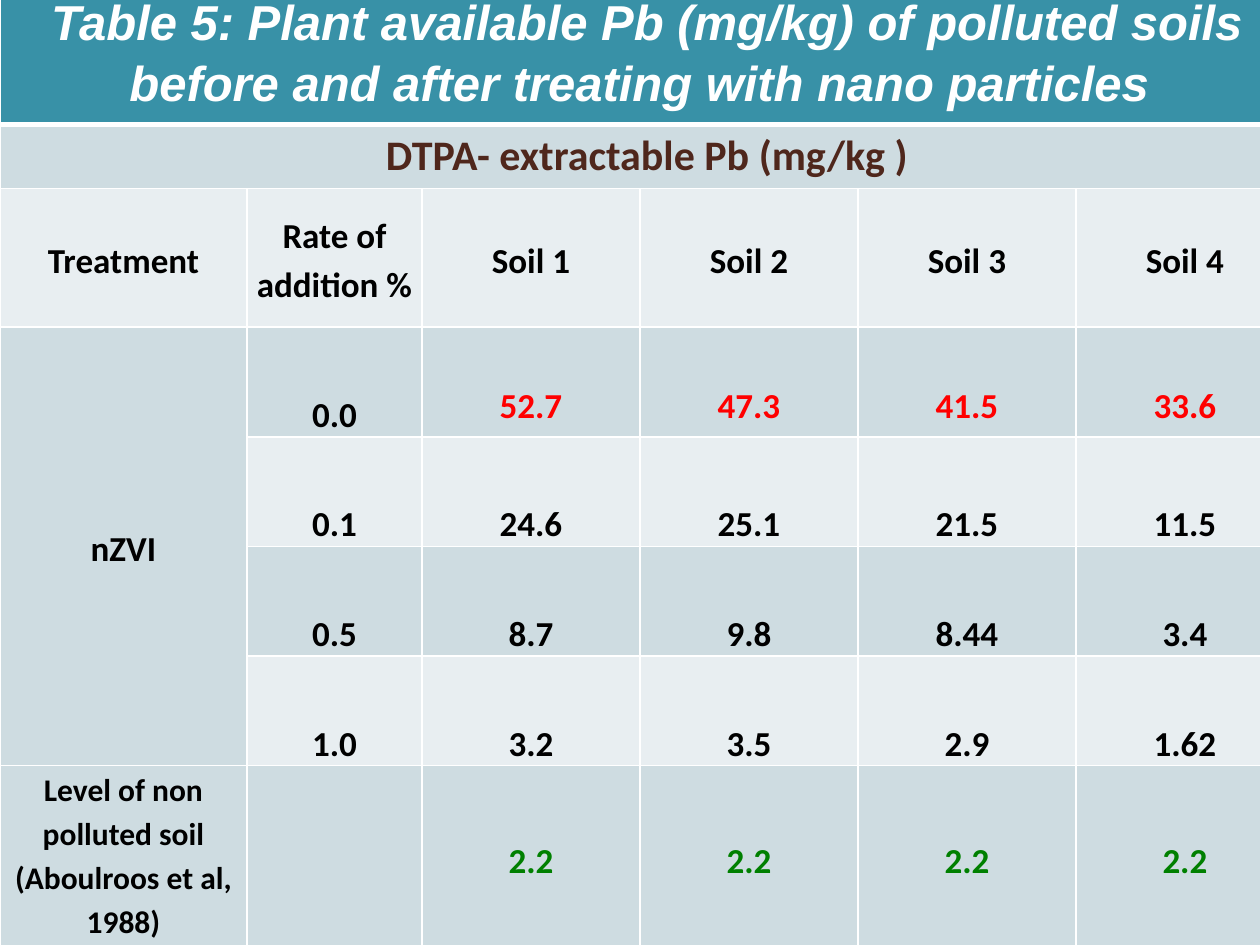
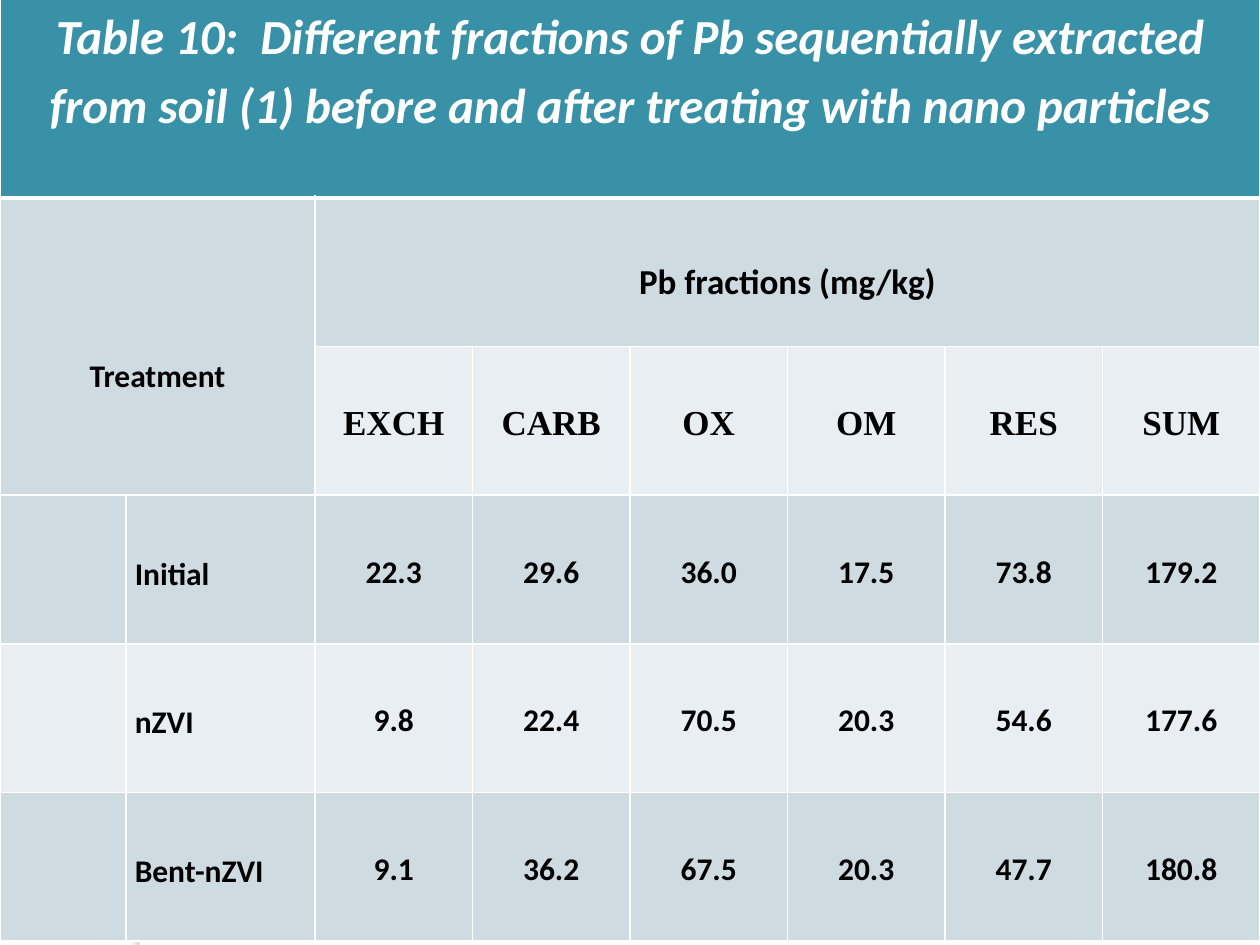
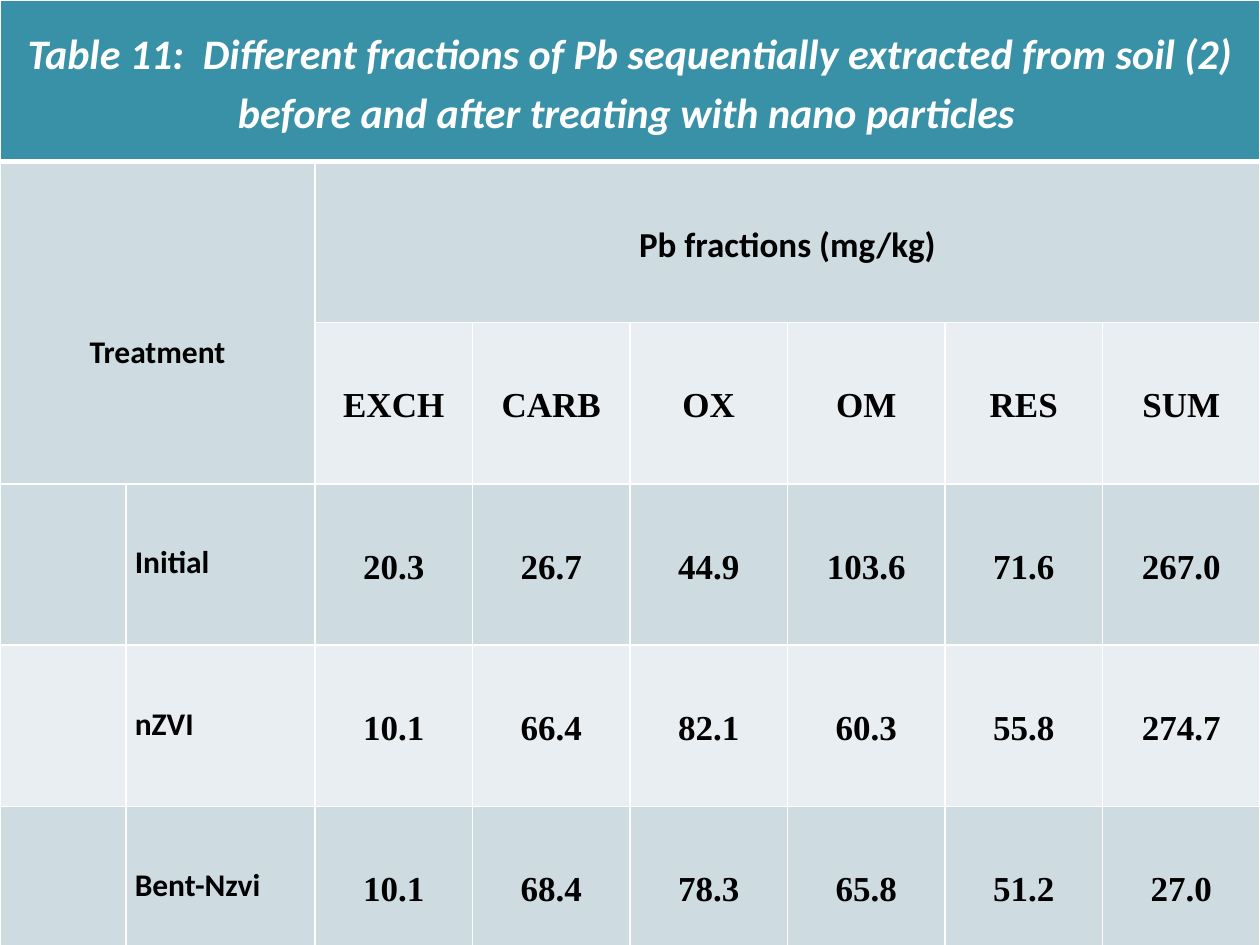
from dataclasses import dataclass, replace
from typing import NamedTuple

from lxml.etree import SubElement
from pptx import Presentation
from pptx.dml.color import RGBColor
from pptx.enum.shapes import MSO_SHAPE
from pptx.enum.text import MSO_ANCHOR, PP_ALIGN
from pptx.oxml.ns import qn
from pptx.util import Inches, Pt


@dataclass(frozen=True)
class Theme:
    header: str = "3891A7"
    dark_band: str = "CEDCE1"
    light_band: str = "E8EEF1"
    shadow: str = "736F63"
    white: str = "FFFFFF"
    black: str = "000000"
    brown: str = "4F271C"
    red: str = "FF0000"
    green: str = "008000"
    sans: str = "Calibri"
    serif: str = "Times New Roman"
    title_font: str = "Arial"
    title_size: int = 28
    subtitle_size: int = 24
    text_size: int = 20
    small_size: int = 18
    border: int = 1
    header_border: int = 3


THEME = Theme()


class Margins(NamedTuple):
    left: float = 0.07
    top: float = 0
    right: float = 0.07
    bottom: float = 0


@dataclass(frozen=True)
class CellStyle:
    size: int = THEME.text_size
    color: str = THEME.black
    font: str = THEME.sans
    italic: bool = False
    align: PP_ALIGN = PP_ALIGN.CENTER
    anchor: MSO_ANCHOR = MSO_ANCHOR.MIDDLE
    line_spacing: float = 1.15
    space_after: int = 10
    margins: Margins = Margins()
    tail_size: int = 0  # size of a closing space, if there is one


class Entry(NamedTuple):
    row: int
    column: int
    text: str
    style: CellStyle
    rows: int = 1
    columns: int = 1


@dataclass(frozen=True)
class TablePage:
    top: float
    columns: list[float]
    rows: list[float]
    entries: list[Entry]


# Cell styles
BODY = CellStyle()
SMALL = replace(BODY, size=THEME.small_size)
SERIF = replace(BODY, font=THEME.serif)
TITLE = replace(BODY, size=THEME.title_size, color=THEME.white, italic=True)
WIDE_TITLE = replace(TITLE, font=THEME.title_font, anchor=MSO_ANCHOR.TOP, line_spacing=1,
                     space_after=0, margins=Margins(0.1, 0.05, 0.1, 0.05), tail_size=32)
SUBTITLE = replace(WIDE_TITLE, size=THEME.subtitle_size, color=THEME.brown, font=THEME.sans,
                   italic=False, tail_size=0)
LOW = replace(BODY, anchor=MSO_ANCHOR.BOTTOM, line_spacing=1, space_after=0,
              margins=Margins(0.01, 0.01, 0.01, 0))
UNTREATED = replace(LOW, color=THEME.red, margins=Margins(bottom=0.07))
CLEAN = replace(BODY, color=THEME.green)
NOTE = replace(SMALL, anchor=MSO_ANCHOR.TOP)
CORNER = replace(SMALL, margins=Margins(top=0.43))
GROUP = replace(BODY, anchor=MSO_ANCHOR.TOP, margins=Margins(top=0.45))
ROW_LABEL = replace(CORNER, align=PP_ALIGN.LEFT, anchor=MSO_ANCHOR.TOP)


def row_entries(row: int, column: int, texts: list[str], style: CellStyle) -> list[Entry]:
    return [Entry(row, column + offset, text, style) for offset, text in enumerate(texts)]


def add_span(para, text: str, style: CellStyle, size: int) -> None:
    span = para.add_run()
    span.text = text
    formats = {"name": style.font, "size": Pt(size), "bold": True, "italic": style.italic}
    for name, value in formats.items():
        setattr(span.font, name, value)
    span.font.color.rgb = RGBColor.from_string(style.color)


def write_cell(cell, text: str, style: CellStyle) -> None:
    cell.vertical_anchor = style.anchor
    for side, length in style.margins._asdict().items():
        setattr(cell, f"margin_{side}", Inches(length))
    para = cell.text_frame.paragraphs[0]
    formats = {"alignment": style.align, "line_spacing": style.line_spacing,
               "space_after": Pt(style.space_after)}
    for name, value in formats.items():
        setattr(para, name, value)
    add_span(para, text, style, style.size)
    if style.tail_size:
        add_span(para, " ", style, style.tail_size)


def paint_cell(cell, row: int) -> None:
    """Draw the white borders, then the fill of the row's band."""
    properties = cell._tc.get_or_add_tcPr()
    widths = {"a:lnL": THEME.border, "a:lnR": THEME.border,
              "a:lnT": THEME.header_border if row == 1 else THEME.border,
              "a:lnB": THEME.header_border if row == 0 else THEME.border}
    for tag, width in widths.items():
        line = SubElement(properties, qn(tag), w=str(Pt(width)))
        fill = SubElement(line, qn("a:solidFill"))
        SubElement(fill, qn("a:srgbClr"), val=THEME.white)
    band = THEME.dark_band if row % 2 else THEME.light_band
    cell.fill.solid()
    cell.fill.fore_color.rgb = RGBColor.from_string(band if row else THEME.header)


def add_side_band(page) -> None:
    """Put the shadowed white band on the layout that the pages share."""
    band = page.shapes.add_shape(MSO_SHAPE.RECTANGLE, Inches(1.11), 0, Inches(0.08), Inches(7.5))
    band.fill.solid()
    band.fill.fore_color.rgb = RGBColor.from_string(THEME.white)
    band.line.fill.background()
    band.shadow.inherit = False
    effects = band._element.spPr.find(qn("a:effectLst"))
    shadow = SubElement(effects, qn("a:outerShdw"), blurRad=str(Pt(3)), dist=str(Pt(3)),
                        dir=str(180 * 60000))
    color = SubElement(shadow, qn("a:srgbClr"), val=THEME.shadow)
    SubElement(color, qn("a:alpha"), val="25000")
    page.slide_layout.shapes._spTree.append(band._element)


def add_table_page(deck, content: TablePage):
    page = deck.slides.add_slide(deck.slide_layouts[6])
    frame = page.shapes.add_table(len(content.rows), len(content.columns), 0, Inches(content.top),
                                  Inches(sum(content.columns)), Inches(sum(content.rows)))
    table = frame.table
    table.horz_banding = table.first_row = False
    for column, width in zip(table.columns, content.columns):
        column.width = Inches(width)
    for index, (row, height) in enumerate(zip(table.rows, content.rows)):
        row.height = Inches(height)
        for cell in row.cells:
            paint_cell(cell, index)
    for entry in content.entries:
        cell = table.cell(entry.row, entry.column)
        if entry.rows * entry.columns > 1:
            cell.merge(table.cell(entry.row + entry.rows - 1, entry.column + entry.columns - 1))
        write_cell(cell, entry.text, entry.style)
    return page


# Plant available lead in four soils
def available_page() -> TablePage:
    measured = {
        "0.0": ["52.7", "47.3", "41.5", "33.6"],
        "0.1": ["24.6", "25.1", "21.5", "11.5"],
        "0.5": ["8.7", "9.8", "8.44", "3.4"],
        "1.0": ["3.2", "3.5", "2.9", "1.62"],
    }
    headings = ["Treatment", "Rate of addition %"] + [f"Soil {number}" for number in range(1, 5)]
    entries = [
        Entry(0, 0, "Table 5: Plant available Pb (mg/kg) of polluted soils before and after "
              "treating with nano particles", WIDE_TITLE, columns=6),
        Entry(1, 0, "DTPA- extractable Pb (mg/kg )", SUBTITLE, columns=6),
        *row_entries(2, 0, headings, BODY),
        Entry(3, 0, "nZVI", BODY, rows=4),
        Entry(7, 0, "Level of non polluted soil (Aboulroos et al, 1988)", NOTE),
        *row_entries(7, 2, ["2.2"] * 4, CLEAN),
    ]
    for row, (rate, values) in enumerate(measured.items(), start=3):
        entries.append(Entry(row, 1, rate, LOW))
        entries += row_entries(row, 2, values, UNTREATED if row == 3 else LOW)
    return TablePage(-0.08, [1.96, 1.39] + [1.73] * 4,
                     [1.07, 0.49, 1.1] + [0.87] * 4 + [1.48], entries)


# Lead fractions of one soil
def fractions_page(title: str, title_style: CellStyle, value_style: CellStyle, top: float,
                   title_height: float, row_height: float,
                   measured: dict[str, list[str]]) -> TablePage:
    entries = [
        Entry(0, 0, title, title_style, columns=8),
        Entry(1, 0, "Treatment", CORNER, rows=2, columns=2),
        Entry(1, 2, "Pb fractions (mg/kg)", GROUP, columns=6),
        *row_entries(2, 2, ["EXCH", "CARB", "OX", "OM", "RES", "SUM"], SERIF),
    ]
    for row, (treatment, values) in enumerate(measured.items(), start=3):
        entries.append(Entry(row, 1, treatment, ROW_LABEL))
        entries += row_entries(row, 2, values, value_style)
    return TablePage(top, [1, 1.5] + [1.25] * 6, [title_height] + [row_height] * 5, entries)


def main() -> None:
    deck = Presentation()
    deck.slide_width, deck.slide_height = Inches(10), Inches(7.5)
    fractions = "Different fractions of Pb sequentially extracted from soil"
    ending = "before and after treating with nano particles"
    contents = [
        available_page(),
        fractions_page(
            f"Table 10:  {fractions} (1) {ending}", replace(TITLE, anchor=MSO_ANCHOR.TOP),
            SMALL, -0.01, 1.58, 1.18,
            {"Initial": ["22.3", "29.6", "36.0", "17.5", "73.8", "179.2"],
             "nZVI": ["9.8", "22.4", "70.5", "20.3", "54.6", "177.6"],
             "Bent-nZVI": ["9.1", "36.2", "67.5", "20.3", "47.7", "180.8"]}),
        fractions_page(
            f"Table 11:  {fractions} (2) {ending}",
            replace(TITLE, size=THEME.subtitle_size, tail_size=THEME.small_size),
            SERIF, 0, 1.28, 1.28,
            {"Initial": ["20.3", "26.7", "44.9", "103.6", "71.6", "267.0"],
             "nZVI": ["10.1", "66.4", "82.1", "60.3", "55.8", "274.7"],
             "Bent-Nzvi": ["10.1", "68.4", "78.3", "65.8", "51.2", "27.0"]}),
    ]
    pages = [add_table_page(deck, content) for content in contents]
    add_side_band(pages[0])
    deck.save("out.pptx")


if __name__ == "__main__":
    main()
